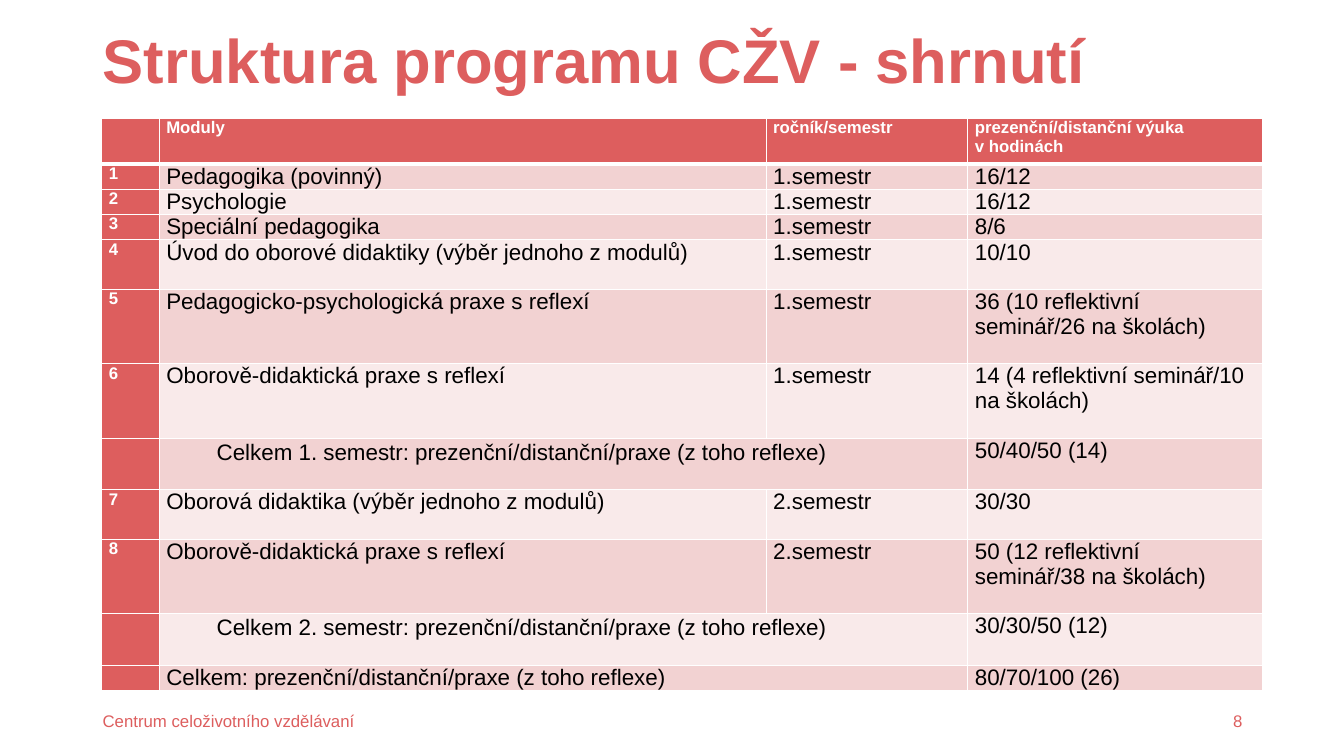
from lxml import etree
from pptx import Presentation
from pptx import util as u
from pptx.dml.color import RGBColor
from pptx.enum import text
from pptx.oxml.ns import qn

RED = RGBColor(0xDD, 0x5E, 0x5E)
ROSE = RGBColor(0xF2, 0xD2, 0xD2)
BLUSH = RGBColor(0xF9, 0xEA, 0xEA)
WHITE = RGBColor(0xFF, 0xFF, 0xFF)
BLACK = RGBColor(0, 0, 0)

LEFT, CONTENT_WIDTH = 0.92, 11.5
FOOTER_TOP, FOOTER_WIDTH, FOOTER_HEIGHT = 6.95, 3, 0.4
COLUMNS = [0.57, 6.02, 2, 2.92]
ROWS = [0.46, 0.25, 0.25, 0.25, 0.49, 0.74, 0.74, 0.51, 0.49, 0.74, 0.51, 0.25]
FIRST, SECOND = "1.semestr", "2.semestr"
TOTAL = "prezenční/distanční/praxe (z toho reflexe)"
MODULES = [
    ("", "Moduly", "ročník/semestr", "prezenční/distanční výuka v\u00a0hodinách"),
    ("1", "Pedagogika (povinný)", FIRST, "16/12"),
    ("2", "Psychologie", FIRST, "16/12"),
    ("3", "Speciální pedagogika", FIRST, "8/6"),
    ("4", "Úvod do oborové didaktiky (výběr jednoho z\u00a0modulů)", FIRST, "10/10"),
    ("5", "Pedagogicko-psychologická praxe s reflexí", FIRST,
     "36 (10 reflektivní seminář/26 na školách)"),
    ("6", "Oborově-didaktická praxe s reflexí", FIRST,
     "14 (4 reflektivní seminář/10 na školách)"),
    ("", "Celkem 1. semestr: " + TOTAL, None, "50/40/50 (14)"),
    ("7", "Oborová didaktika (výběr jednoho z\u00a0modulů)", SECOND, "30/30"),
    ("8", "Oborově-didaktická praxe s reflexí", SECOND,
     "50 (12 reflektivní seminář/38 na školách)"),
    ("", "Celkem 2. semestr: " + TOTAL, None, "30/30/50 (12)"),
    ("", "Celkem: " + TOTAL, None, "80/70/100 (26)"),
]


def write(paragraph, words, size, color, bold=False):
    run = paragraph.add_run()
    run.text = words
    values = {"name": "Arial", "size": u.Pt(size), "bold": bold}
    for name, value in values.items():
        setattr(run.font, name, value)
    run.font.color.rgb = color


def add_borders(cell, widths):
    properties = cell._tc.get_or_add_tcPr()
    for side, width in widths.items():
        line = etree.SubElement(properties, qn("a:ln" + side), w=str(u.Pt(width)))
        fill = etree.SubElement(line, qn("a:solidFill"))
        etree.SubElement(fill, qn("a:srgbClr"), val=str(WHITE))


presentation = Presentation()
presentation.slide_width = u.Inches(13.33)
presentation.slide_height = u.Inches(7.5)
slide = presentation.slides.add_slide(presentation.slide_layouts[5])

# Title, followed by an empty second line
title = slide.shapes.title
box = {"left": LEFT, "top": 0.27, "width": CONTENT_WIDTH, "height": 1.45}
for name, value in box.items():
    setattr(title, name, u.Inches(value))
title.text_frame.auto_size = text.MSO_AUTO_SIZE.NONE
title.text_frame.vertical_anchor = text.MSO_ANCHOR.MIDDLE
paragraph = title.text_frame.paragraphs[0]
paragraph.alignment = text.PP_ALIGN.LEFT
paragraph.line_spacing = 0.9
write(paragraph, "Struktura programu CŽV - shrnutí", 44, RED, True)
paragraph.add_line_break()

# Module table
frame = slide.shapes.add_table(
    len(ROWS), len(COLUMNS), u.Inches(1.01), u.Inches(1.17),
    u.Inches(sum(COLUMNS)), u.Inches(sum(ROWS)))
table = frame.table
for column, width in zip(table.columns, COLUMNS):
    column.width = u.Inches(width)
for row, height in zip(table.rows, ROWS):
    row.height = u.Inches(height)

for r, module in enumerate(MODULES):
    for c, words in enumerate(module):
        cell = table.cell(r, c)
        heading = r == 0 or c == 0
        add_borders(cell, {"L": 1, "R": 1, "T": 3 if r == 1 else 1,
                           "B": 3 if r == 0 else 1})
        cell.fill.solid()
        cell.fill.fore_color.rgb = RED if heading else ROSE if r % 2 else BLUSH
        cell.margin_left = cell.margin_right = u.Inches(0.07)
        cell.margin_top = cell.margin_bottom = 0
        paragraph = cell.text_frame.paragraphs[0]
        if words:
            write(paragraph, words, 12 if heading else 16,
                  WHITE if heading else BLACK, heading)
        else:
            etree.SubElement(paragraph._p, qn("a:endParaRPr"), sz="1200")
        # Semester totals are indented
        if c == 1 and words.startswith("Celkem ") :
            paragraph.line_spacing = 1.07
            paragraph.space_after = u.Pt(8)
            paragraph._p.get_or_add_pPr().set("marL", str(u.Inches(0.5)))
    if module[2] is None:
        table.cell(r, 1).merge(table.cell(r, 2))

# Footer and page number
footers = [
    (LEFT, "Centrum celoživotního vzdělávaní", text.PP_ALIGN.LEFT),
    (LEFT + CONTENT_WIDTH - FOOTER_WIDTH, "8", text.PP_ALIGN.RIGHT),
]
for left, words, alignment in footers:
    shape = slide.shapes.add_textbox(
        u.Inches(left), u.Inches(FOOTER_TOP),
        u.Inches(FOOTER_WIDTH), u.Inches(FOOTER_HEIGHT))
    shape.text_frame.word_wrap = True
    shape.text_frame.vertical_anchor = text.MSO_ANCHOR.MIDDLE
    paragraph = shape.text_frame.paragraphs[0]
    paragraph.alignment = alignment
    write(paragraph, words, 12, RED)

presentation.save("out.pptx")
